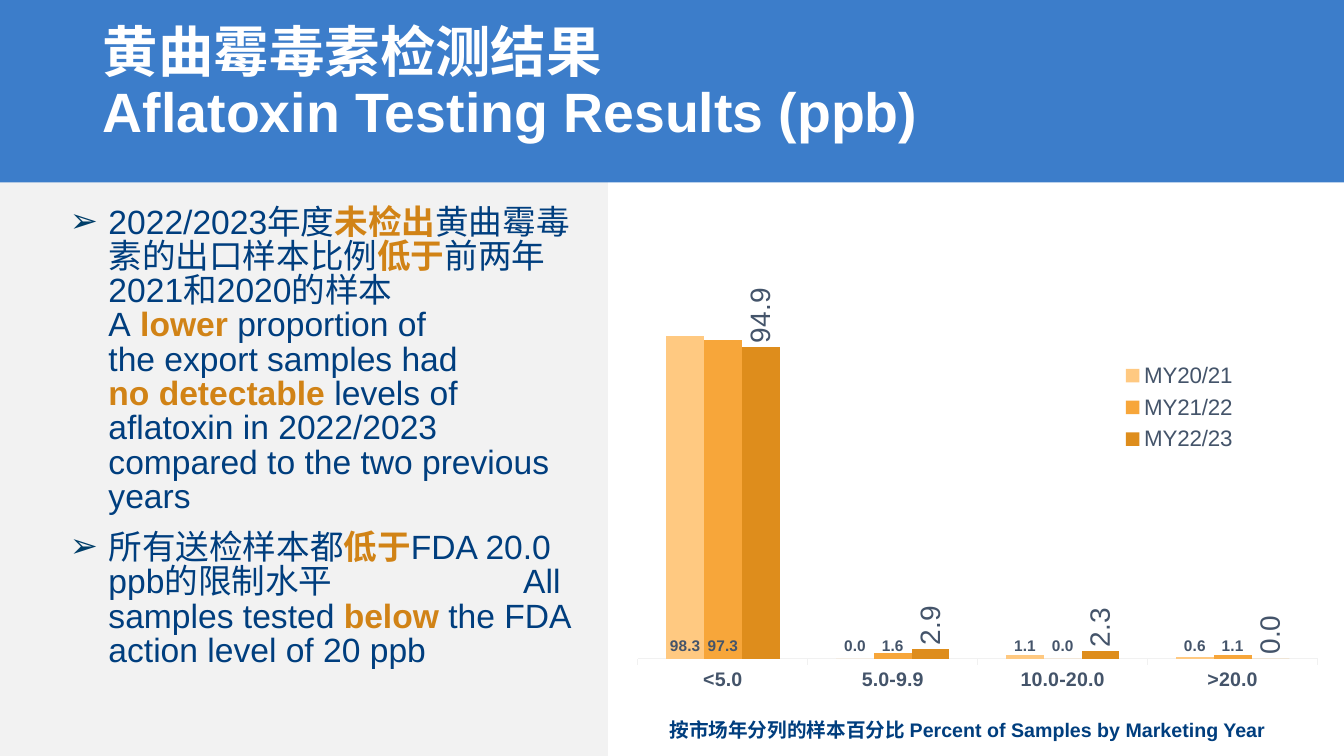
from copy import deepcopy
from pptx import Presentation
from pptx.chart.data import CategoryChartData
from pptx.dml.color import RGBColor
from pptx.enum.chart import XL_CHART_TYPE as ChartType, XL_LABEL_POSITION as LabelPosition
from pptx.enum.chart import XL_LEGEND_POSITION as LegendPosition, XL_TICK_MARK as TickMark
from pptx.enum.shapes import MSO_SHAPE as Shape
from pptx.enum.text import MSO_ANCHOR as Anchor, MSO_AUTO_SIZE as AutoSize, PP_ALIGN as Align
from pptx.oxml import parse_xml
from pptx.oxml.ns import nsdecls, qn
from pptx.util import Cm, Pt

WHITE = RGBColor(0xFF, 0xFF, 0xFF)
PANEL_GREY = RGBColor(0xF2, 0xF2, 0xF2)
BAND_BLUE = RGBColor(0x3C, 0x7D, 0xCA)
NAVY = RGBColor(0x00, 0x3E, 0x7E)
ORANGE = RGBColor(0xD1, 0x83, 0x16)
SLATE = RGBColor(0x44, 0x54, 0x6A)
AXIS_GREY = RGBColor(0xF1, 0xF1, 0xF1)
SERIES_COLORS = [RGBColor(0xFF, 0xC9, 0x81), RGBColor(0xF7, 0xA6, 0x3A), RGBColor(0xDE, 0x8D, 0x1C)]


def add_text(para, text, size, color, bold):
    """Add formatted text, turning each newline into a line break."""
    for number, line in enumerate(text.split("\n")):
        if number:
            para.add_line_break()
            para._p[-1].insert(0, deepcopy(span._r.rPr))
        span = para.add_run()
        span.text = line
        for name, value in {"name": "Arial", "size": Pt(size), "bold": bold}.items():
            setattr(span.font, name, value)
        span.font.color.rgb = color


def set_layout(element, index, inner, **fractions):
    """Place a chart part by fractions of the chart area."""
    for old in element.findall(qn("c:layout")):
        element.remove(old)
    target = '<c:layoutTarget val="inner"/>' if inner else ""
    modes = '<c:xMode val="edge"/><c:yMode val="edge"/>'
    values = "".join(f'<c:{key} val="{value}"/>' for key, value in fractions.items())
    element.insert(index, parse_xml(
        f'<c:layout {nsdecls("c")}><c:manualLayout>{target}{modes}{values}</c:manualLayout></c:layout>'))


deck = Presentation()
deck.slide_width, deck.slide_height = Cm(33.87), Cm(19.05)
page = deck.slides.add_slide(deck.slide_layouts[1])
title, body = page.placeholders

# Background blocks, each sent behind everything so far
for color, place in [(BAND_BLUE, (0, 0, 33.87, 4.6)), (PANEL_GREY, (0, 2.03, 15.32, 17.02))]:
    block = page.shapes.add_shape(Shape.RECTANGLE, *map(Cm, place))
    block.shadow.inherit = False
    block.fill.solid()
    block.fill.fore_color.rgb = color
    block.line.fill.background()
    page.shapes._spTree.insert(2, block._element)

# Title and body frames
for box, place, anchor in [(title, (2.34, 0.48, 29.21, 3.3), Anchor.MIDDLE),
                           (body, (0.91, 5.08, 14.1, 13.97), Anchor.TOP)]:
    box.left, box.top, box.width, box.height = map(Cm, place)
    frame = box.text_frame
    frame.word_wrap, frame.auto_size, frame.vertical_anchor = True, AutoSize.NONE, anchor

para = title.text_frame.paragraphs[0]
para.alignment, para.line_spacing = Align.LEFT, 0.9
add_text(para, "黄曲霉毒素检测结果\nAflatoxin Testing Results (ppb)", 39.6, WHITE, True)

# Findings: plain and highlighted text alternate
findings = [
    ["2022/2023年度", "未检出", "黄曲霉毒素的出口样本比例", "低于", "前两年 2021和2020的样本\nA",
     " lower ", "proportion of \nthe export samples had \n", "no detectable ",
     "levels of aflatoxin in 2022/2023 compared to the two previous years"],
    ["所有送检样本都", "低于", "FDA 20.0 ppb的限制水平\tAll samples tested ", "below",
     " the FDA action level of 20 ppb"],
]
for number, parts in enumerate(findings):
    frame = body.text_frame
    para = frame.add_paragraph() if number else frame.paragraphs[0]
    para.line_spacing, para.space_after = 0.85, Pt(6)
    para.space_before = Pt(6 if number else 0)
    props = para._p.get_or_add_pPr()
    props.set("marL", str(Cm(1.57)))
    props.set("indent", str(Cm(-0.97)))
    for xml in ('<a:buClr {}><a:srgbClr val="003E69"/></a:buClr>',
                '<a:buFont {} typeface="Arial"/>',
                '<a:buChar {} char="➢"/>',
                f'<a:tabLst {{}}><a:tab pos="{Cm(12.37)}" algn="l"/></a:tabLst>'):
        props.append(parse_xml(xml.format(nsdecls("a"))))
    for position, text in enumerate(parts):
        marked = position % 2 == 1
        add_text(para, text, 24, ORANGE if marked else NAVY, marked)

# Chart
data = CategoryChartData()
data.categories = ["<5.0", "5.0-9.9", "10.0-20.0", ">20.0"]
data.add_series("MY20/21", [98.3, 0, 1.1, 0.6])
data.add_series("MY21/22", [97.3, 1.6, 0, 1.1])
data.add_series("MY22/23", [94.9, 2.9, 2.3, 0])
chart = page.shapes.add_chart(ChartType.COLUMN_CLUSTERED, Cm(15.49), Cm(4.65), Cm(18.36), Cm(14.4), data).chart
chart.font.name, chart.font.size = "Cabin", Pt(24)
chart.has_title = False
chart.has_legend = True
chart.legend.position = LegendPosition.RIGHT
chart.legend.include_in_layout = False
set_layout(chart._chartSpace.chart.plotArea, 0, True, x=0.032, y=0.141, w=0.933, h=0.689)
set_layout(chart.legend._element, 1, False, x=0.69, y=0.3, w=0.17, h=0.18)

value_axis, category_axis = chart.value_axis, chart.category_axis
value_axis.minimum_scale, value_axis.maximum_scale = 0, 120
value_axis.has_major_gridlines = False
value_axis.visible = False
category_axis.major_tick_mark = TickMark.OUTSIDE
category_axis.format.line.color.rgb = AXIS_GREY
category_axis.format.line.width = Pt(0.75)

plot = chart.plots[0]
plot.gap_width, plot.overlap, plot.vary_by_categories = 150, 0, False
chart_fonts = [(category_axis.tick_labels.font, 14, True), (chart.legend.font, 16, False)]
for series, color in zip(plot.series, SERIES_COLORS):
    series.format.fill.solid()
    series.format.fill.fore_color.rgb = color
    latest = series.name == "MY22/23"
    labels = series.data_labels
    labels.show_value = True
    labels.number_format, labels.number_format_is_linked = "#,##0.0", False
    labels.position = LabelPosition.OUTSIDE_END if latest else LabelPosition.INSIDE_BASE
    chart_fonts.append((labels.font, 20 if latest else 11, not latest))
    if latest:
        frame_props = labels._element.get_or_add_txPr().bodyPr
        frame_props.set("rot", "-5400000")
        frame_props.set("vert", "horz")
for font, size, bold in chart_fonts:
    for name, value in {"name": "Arial", "size": Pt(size), "bold": bold}.items():
        setattr(font, name, value)
    font.color.rgb = SLATE

# Chart caption
caption = page.shapes.add_textbox(Cm(15.49), Cm(17.96), Cm(17.78), Cm(0.86))
caption.text_frame.word_wrap = True
para = caption.text_frame.paragraphs[0]
para.alignment = Align.CENTER
add_text(para, "按市场年分列的样本百分比 Percent of Samples by Marketing Year", 14, NAVY, True)

deck.save("out.pptx")
